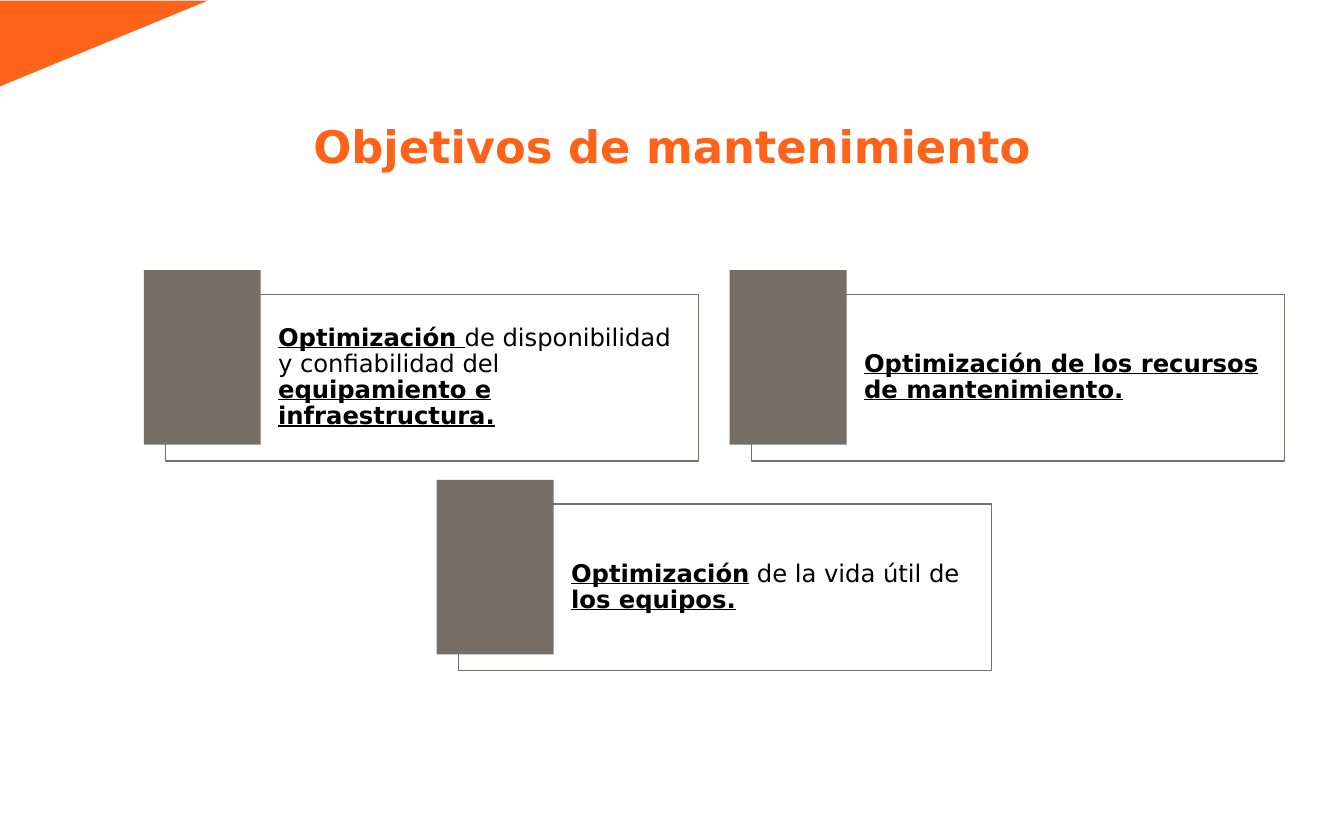
"""Build the slide on the objectives of maintenance."""
from dataclasses import dataclass

from pptx import Presentation
from pptx.dml.color import RGBColor
from pptx.enum.shapes import MSO_SHAPE
from pptx.enum.text import MSO_ANCHOR, MSO_AUTO_SIZE, PP_ALIGN
from pptx.shapes.autoshape import Shape
from pptx.slide import Slide
from pptx.text.text import TextFrame
from pptx.util import Inches, Pt

ORANGE, TAUPE, BLACK = "FF6319", "776F65", "000000"
FONT = "DejaVu Sans"
CARD_LEFT, CARD_TOP = 1.23, 2.19
CARD_WIDTH, CARD_HEIGHT = 3.97, 1.24
COLUMN_PITCH, ROW_PITCH = 4.36, 1.56
TAB_SHIFT_X, TAB_SHIFT_Y = -0.16, -0.18
TAB_WIDTH, TAB_HEIGHT = 0.87, 1.3


@dataclass(frozen=True)
class Phrase:
    text: str
    stressed: bool = True


@dataclass(frozen=True)
class Objective:
    column: float
    row: int
    phrases: tuple[Phrase, ...]


OBJECTIVES = (
    Objective(0, 0, (
        Phrase("Optimización "),
        Phrase("de disponibilidad y confiabilidad del ", False),
        Phrase("equipamiento e infraestructura."),
    )),
    Objective(1, 0, (Phrase("Optimización de los recursos de mantenimiento."),)),
    Objective(0.5, 1, (
        Phrase("Optimización"),
        Phrase(" de la vida útil de ", False),
        Phrase("los equipos."),
    )),
)


def color(value: str) -> RGBColor:
    return RGBColor.from_string(value)


def apply(target: object, formats: dict[str, object]) -> None:
    for name, value in formats.items():
        setattr(target, name, value)


def format_frame(frame: TextFrame, anchor: MSO_ANCHOR, align: PP_ALIGN,
                 left: float, other: float) -> None:
    apply(frame, {
        "word_wrap": True,
        "auto_size": MSO_AUTO_SIZE.NONE,
        "vertical_anchor": anchor,
        "margin_left": Inches(left),
        "margin_top": Inches(other),
        "margin_right": Inches(other),
        "margin_bottom": Inches(other),
    })
    apply(frame.paragraphs[0], {"alignment": align, "line_spacing": 0.9})


def add_phrase(frame: TextFrame, phrase: Phrase, size: float, ink: str,
               underline: bool) -> None:
    run = frame.paragraphs[0].add_run()
    run.text = phrase.text
    apply(run.font, {"name": FONT, "size": Pt(size),
                     "bold": phrase.stressed, "underline": underline})
    run.font.color.rgb = color(ink)


def add_filled(slide: Slide, kind: MSO_SHAPE, left: float, top: float,
               width: float, height: float, fill: str) -> Shape:
    shape = slide.shapes.add_shape(
        kind, Inches(left), Inches(top), Inches(width), Inches(height))
    shape.shadow.inherit = False
    shape.fill.solid()
    shape.fill.fore_color.rgb = color(fill)
    shape.line.fill.background()
    return shape


def add_title(slide: Slide, text: str) -> None:
    title = slide.shapes.title
    apply(title, {"left": Inches(0.75), "top": Inches(0.46),
                  "width": Inches(8.5), "height": Inches(0.83)})
    format_frame(title.text_frame, MSO_ANCHOR.BOTTOM, PP_ALIGN.CENTER, 0, 0)
    add_phrase(title.text_frame, Phrase(text), 24, ORANGE, False)


def add_objective(slide: Slide, objective: Objective) -> None:
    left = CARD_LEFT + objective.column * COLUMN_PITCH
    top = CARD_TOP + objective.row * ROW_PITCH
    card = slide.shapes.add_shape(
        MSO_SHAPE.RECTANGLE, Inches(left), Inches(top),
        Inches(CARD_WIDTH), Inches(CARD_HEIGHT))
    card.shadow.inherit = False
    card.fill.background()
    card.line.color.rgb = color(TAUPE)
    card.line.width = Pt(0.75)
    format_frame(card.text_frame, MSO_ANCHOR.MIDDLE, PP_ALIGN.LEFT, 0.84, 0.05)
    for phrase in objective.phrases:
        add_phrase(card.text_frame, phrase, 13, BLACK, phrase.stressed)
    add_filled(slide, MSO_SHAPE.RECTANGLE, left + TAB_SHIFT_X,
               top + TAB_SHIFT_Y, TAB_WIDTH, TAB_HEIGHT, TAUPE)


def main() -> None:
    presentation = Presentation()
    apply(presentation, {"slide_width": Inches(10), "slide_height": Inches(6.25)})
    slide = presentation.slides.add_slide(presentation.slide_layouts[5])
    corner = add_filled(slide, MSO_SHAPE.RIGHT_TRIANGLE,
                        0.45, -0.45, 0.64, 1.55, ORANGE)
    corner.rotation = 90
    add_title(slide, "Objetivos de mantenimiento")
    for objective in OBJECTIVES:
        add_objective(slide, objective)
    presentation.save("out.pptx")


if __name__ == "__main__":
    main()
